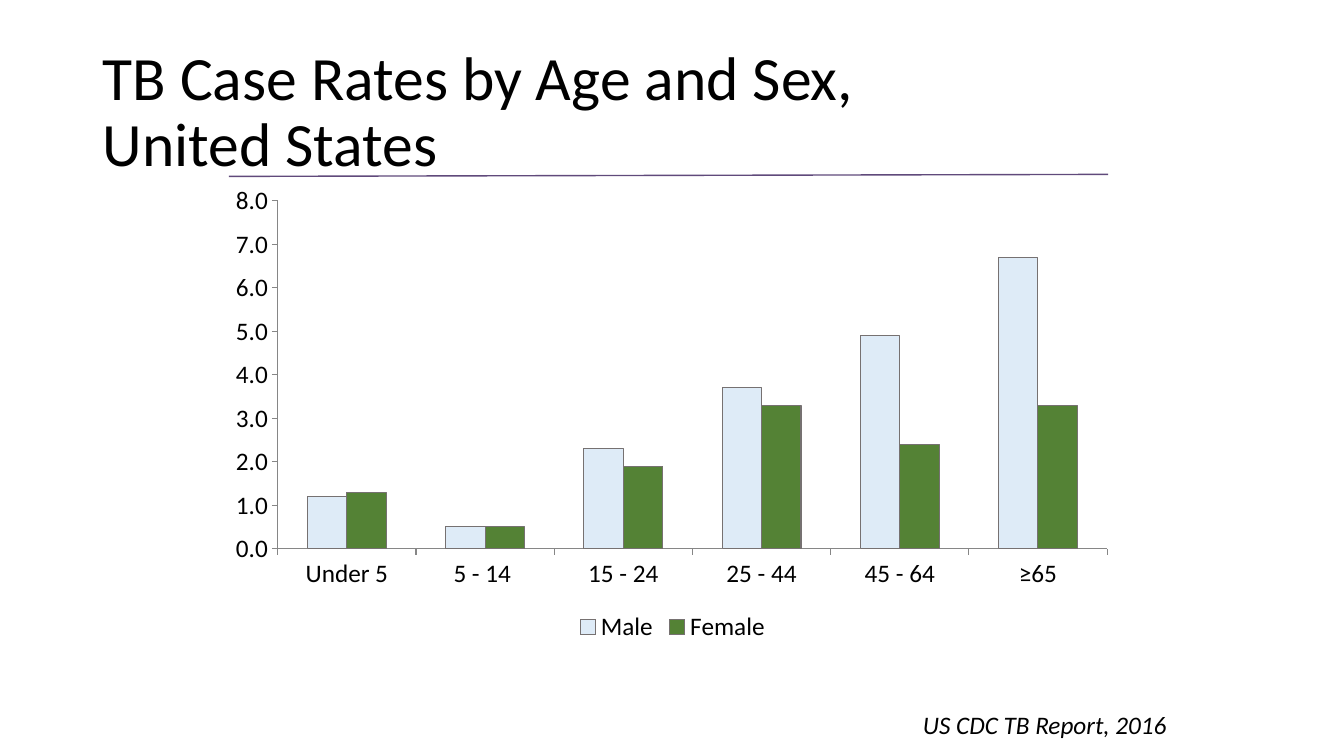
from dataclasses import dataclass

from lxml.etree import SubElement
from pptx import Presentation
from pptx.chart.chart import Chart
from pptx.chart.data import CategoryChartData
from pptx.dml.color import RGBColor
from pptx.enum.chart import XL_CHART_TYPE, XL_LEGEND_POSITION, XL_TICK_MARK
from pptx.enum.shapes import MSO_CONNECTOR
from pptx.enum.text import MSO_ANCHOR, PP_ALIGN
from pptx.oxml import parse_xml
from pptx.oxml.ns import nsdecls, qn
from pptx.slide import Slide
from pptx.util import Inches, Pt


@dataclass(frozen=True)
class Theme:
    font: str = "Calibri"
    text: RGBColor = RGBColor(0x00, 0x00, 0x00)
    rule: RGBColor = RGBColor(0x60, 0x4A, 0x7B)
    bar_outline: RGBColor = RGBColor(0x76, 0x71, 0x71)
    axis: RGBColor = RGBColor(0x86, 0x86, 0x86)
    male: RGBColor = RGBColor(0xDE, 0xEB, 0xF7)
    female: RGBColor = RGBColor(0x54, 0x82, 0x35)
    title_size: int = 44
    body_size: int = 18


@dataclass(frozen=True)
class Box:
    left: float
    top: float
    width: float
    height: float

    def lengths(self) -> tuple[int, ...]:
        return tuple(Inches(side) for side in (self.left, self.top, self.width, self.height))


@dataclass(frozen=True)
class RateSeries:
    name: str
    rates: tuple[float, ...]
    color: RGBColor


THEME = Theme()
AGE_GROUPS = ("Under 5", "5 - 14 ", "15 - 24", "25 - 44", "45 - 64", "≥65")
RATE_SERIES = (
    RateSeries("Male", (1.2, 0.5, 2.3, 3.7, 4.9, 6.7), THEME.male),
    RateSeries("Female", (1.3, 0.5, 1.9, 3.3, 2.4, 3.3), THEME.female),
)
PLOT_FRACTIONS = {"x": 0.065, "y": 0.052, "w": 0.914, "h": 0.739}


def add_text(
    slide: Slide,
    text: str,
    box: Box,
    *,
    size: int,
    italic: bool = False,
    align: PP_ALIGN = PP_ALIGN.LEFT,
    anchor: MSO_ANCHOR = MSO_ANCHOR.TOP,
    line_spacing: float = 1.0,
) -> None:
    frame = slide.shapes.add_textbox(*box.lengths()).text_frame
    frame.word_wrap = True
    frame.vertical_anchor = anchor
    paragraph = frame.paragraphs[0]
    paragraph.text = text
    paragraph.alignment = align
    paragraph.line_spacing = line_spacing
    for run in paragraph.runs:
        run.font.name = THEME.font
        run.font.size = Pt(size)
        run.font.italic = italic
        run.font.color.rgb = THEME.text


def add_rule(slide: Slide, start: tuple[float, float], end: tuple[float, float]) -> None:
    points = [Inches(value) for value in (*start, *end)]
    connector = slide.shapes.add_connector(MSO_CONNECTOR.STRAIGHT, *points)
    connector.line.color.rgb = THEME.rule
    connector.line.width = Pt(1)
    SubElement(connector._element.spPr, qn("a:effectLst"))


def place_plot(chart: Chart) -> None:
    plot_area = chart._chartSpace.chart.plotArea
    for layout in plot_area.findall(qn("c:layout")):
        plot_area.remove(layout)
    fractions = "".join(f'<c:{side} val="{value}"/>' for side, value in PLOT_FRACTIONS.items())
    plot_area.insert(0, parse_xml(
        f'<c:layout {nsdecls("c")}><c:manualLayout><c:layoutTarget val="inner"/>'
        f'<c:xMode val="edge"/><c:yMode val="edge"/>{fractions}</c:manualLayout></c:layout>'
    ))


def add_rate_chart(slide: Slide, box: Box) -> None:
    chart_data = CategoryChartData(number_format="0.0")
    chart_data.categories = AGE_GROUPS
    for rate_series in RATE_SERIES:
        chart_data.add_series(rate_series.name, rate_series.rates)
    chart = slide.shapes.add_chart(
        XL_CHART_TYPE.COLUMN_CLUSTERED, *box.lengths(), chart_data
    ).chart
    chart.has_title = False
    chart.font.name = THEME.font
    chart.font.size = Pt(THEME.body_size)
    chart.font.color.rgb = THEME.text
    chart.has_legend = True
    chart.legend.position = XL_LEGEND_POSITION.BOTTOM
    chart.legend.include_in_layout = False

    for axis in (chart.category_axis, chart.value_axis):
        axis.has_major_gridlines = False
        axis.major_tick_mark = XL_TICK_MARK.OUTSIDE
        axis.minor_tick_mark = XL_TICK_MARK.NONE
        axis.format.line.color.rgb = THEME.axis
        axis.format.line.width = Pt(0.75)
    value_axis = chart.value_axis
    value_axis.minimum_scale = 0
    value_axis.maximum_scale = 8
    value_axis.major_unit = 1
    value_axis.tick_labels.number_format = "#,##0.0"
    value_axis.tick_labels.number_format_is_linked = False

    plot = chart.plots[0]
    plot.gap_width = 150
    plot.overlap = 0
    plot.vary_by_categories = False
    for series, rate_series in zip(plot.series, RATE_SERIES):
        series.format.fill.solid()
        series.format.fill.fore_color.rgb = rate_series.color
        series.format.line.color.rgb = THEME.bar_outline
        series.format.line.width = Pt(0.75)
    place_plot(chart)


def main() -> None:
    presentation = Presentation()
    presentation.slide_width = Inches(13.33)
    presentation.slide_height = Inches(7.5)
    slide = presentation.slides.add_slide(presentation.slide_layouts[6])
    add_text(
        slide,
        "TB Case Rates by Age and Sex, \vUnited States",
        Box(0.92, 0.4, 11.5, 1.45),
        size=THEME.title_size,
        anchor=MSO_ANCHOR.MIDDLE,
        line_spacing=0.9,
    )
    add_rate_chart(slide, Box(2.17, 1.75, 9, 4.67))
    add_text(
        slide,
        "US CDC TB Report, 2016",
        Box(8.39, 6.99, 3.28, 0.4),
        size=THEME.body_size,
        italic=True,
        align=PP_ALIGN.RIGHT,
    )
    add_rule(slide, (2.27, 1.75), (10.99, 1.73))
    presentation.save("out.pptx")


if __name__ == "__main__":
    main()
